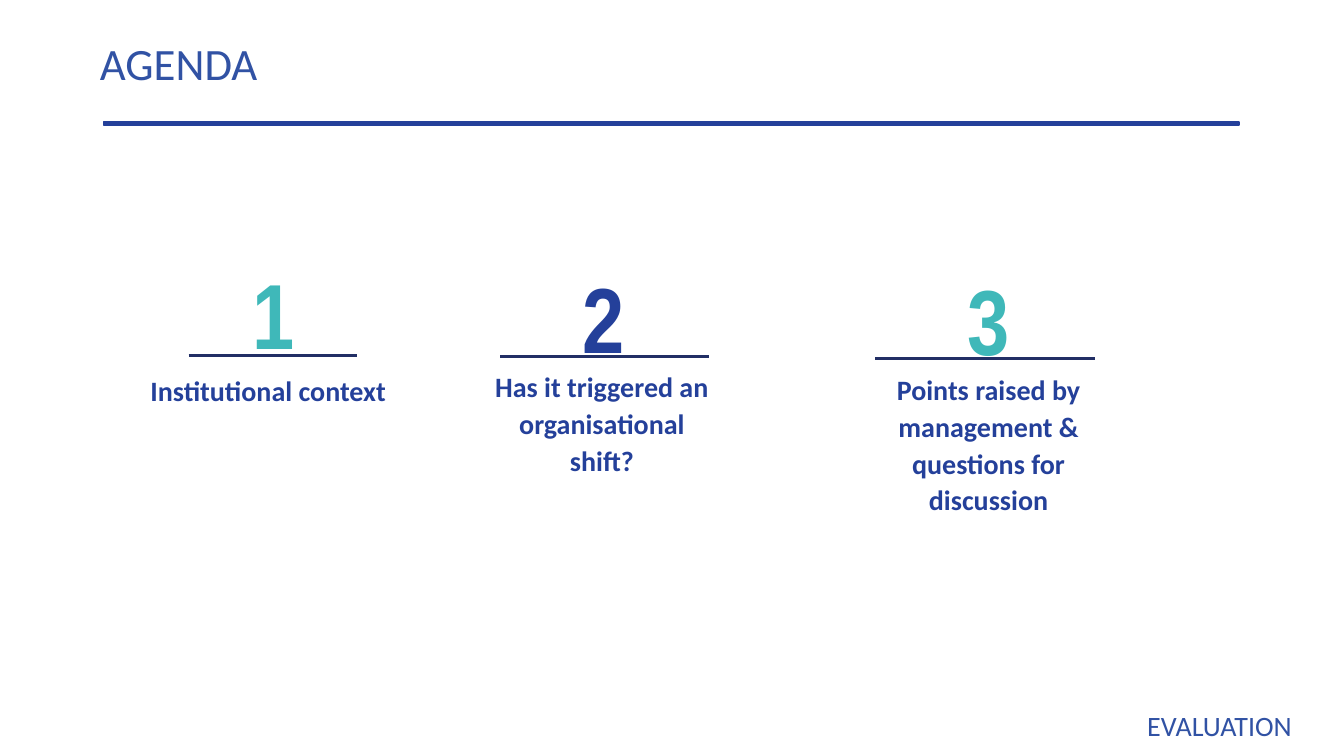
from lxml.etree import SubElement
from pptx import Presentation
from pptx.dml.color import RGBColor
from pptx.enum.shapes import MSO_CONNECTOR, MSO_SHAPE
from pptx.enum.text import MSO_ANCHOR, PP_ALIGN
from pptx.oxml.ns import qn
from pptx.util import Inches, Pt

NAVY, TEAL, BLUE, DARK = "24409A", "3FB8B9", "3152A4", "222F65"

# number, colour, number box, caption, caption box, line (left, right, y)
ITEMS = [
    ("1", TEAL, (1.7, 2.39, 2.02, 0.96),
     "Institutional context", (1.32, 3.62, 2.68, 0.96), (1.87, 3.54, 3.53)),
    ("2", NAVY, (4.94, 2.43, 2.09, 1.03),
     "Has it triggered an organisational shift?", (4.72, 3.58, 2.5, 0.96),
     (4.96, 7.03, 3.54)),
    ("3", TEAL, (8.84, 2.45, 1.93, 1.05),
     "Points raised by management & questions for discussion",
     (8.64, 3.61, 2.33, 0.86), (8.68, 10.86, 3.56)),
]


def color(text):
    return RGBColor.from_string(text)


def place(shape, box):
    shape.left, shape.top, shape.width, shape.height = map(Inches, box)


def write(shape, text, size, tint, font="Calibri", bold=False,
          align=PP_ALIGN.LEFT, lines=1.0):
    shape.text_frame.text = text
    par = shape.text_frame.paragraphs[0]
    par.alignment = align
    par.line_spacing = lines
    face = par.runs[0].font
    face.name, face.size, face.bold = font, Pt(size), bold
    face.color.rgb = color(tint)


def add_text(slide, box, text, size, tint, wrap=True, **style):
    shape = slide.shapes.add_textbox(*map(Inches, box))
    shape.text_frame.word_wrap = wrap
    write(shape, text, size, tint, **style)


def add_title(slide, text):
    title = slide.shapes.title
    place(title, (0.89, 0.32, 12.1, 0.62))
    write(title, text, 32, BLUE, lines=0.9)
    title.text_frame.vertical_anchor = MSO_ANCHOR.BOTTOM


def add_bar(slide, box):
    bar = slide.shapes.add_shape(MSO_SHAPE.RECTANGLE, *map(Inches, box))
    bar.shadow.inherit = False
    bar.fill.solid()
    bar.fill.fore_color.rgb = color(NAVY)
    bar.line.color.rgb = color(NAVY)
    bar.line.width = Pt(1)


def add_line(slide, left, right, y):
    line = slide.shapes.add_connector(
        MSO_CONNECTOR.STRAIGHT, *map(Inches, (left, y, right, y)))
    line.line.color.rgb = color(DARK)
    line.line.width = Pt(2.25)
    SubElement(line._element.spPr, qn("a:effectLst"))


def add_item(slide, number, tint, spot, caption, box, rule):
    style = dict(bold=True, align=PP_ALIGN.CENTER, lines=1.1)
    add_text(slide, box, caption, 20, NAVY, **style)
    add_text(slide, spot, number, 66, tint, font="Arial Narrow", **style)
    add_line(slide, *rule)


def main():
    deck = Presentation()
    deck.slide_width, deck.slide_height = Inches(13.33), Inches(7.5)
    slide = deck.slides.add_slide(deck.slide_layouts.get_by_name("Title Only"))
    add_title(slide, "AGENDA")
    add_text(slide, (11.28, 6.98, 1.68, 0.44), "EVALUATION", 20, BLUE,
             wrap=False)
    add_bar(slide, (1.03, 1.21, 11.26, 0.03))
    for item in ITEMS:
        add_item(slide, *item)
    deck.save("out.pptx")


if __name__ == "__main__":
    main()
